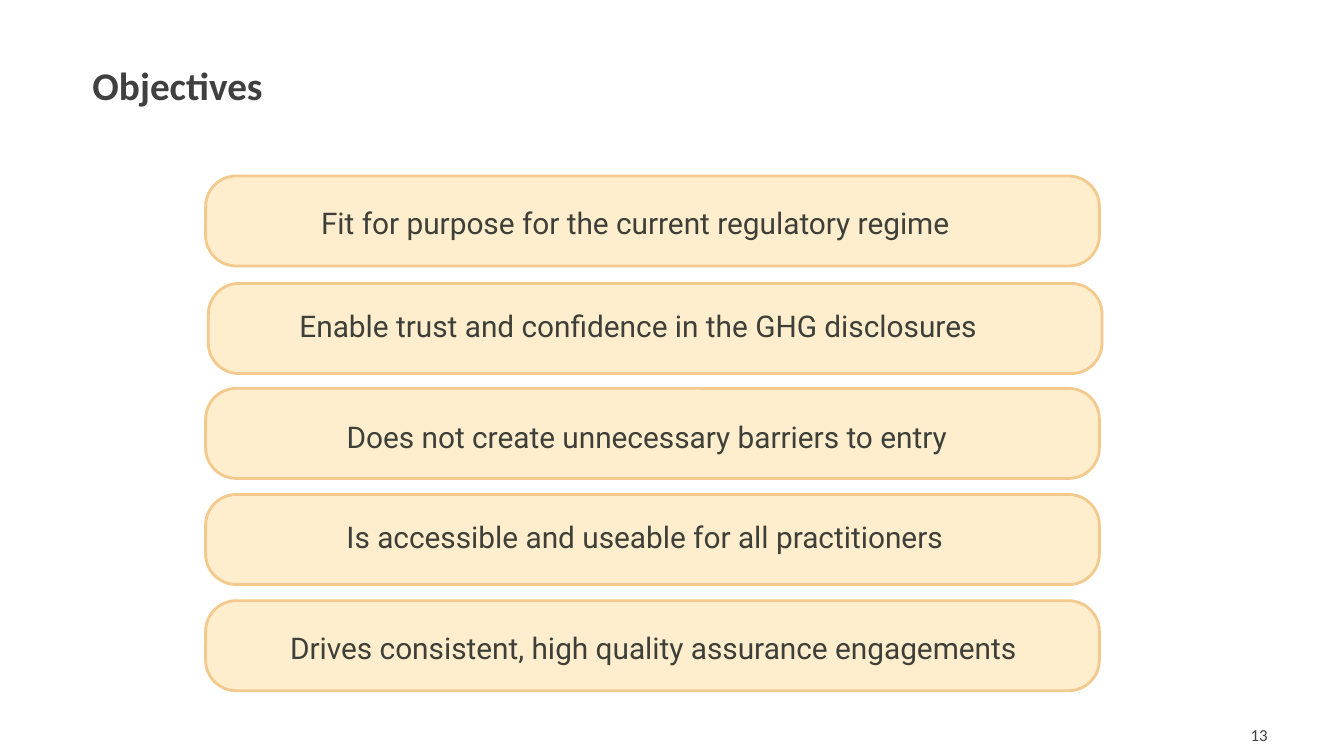
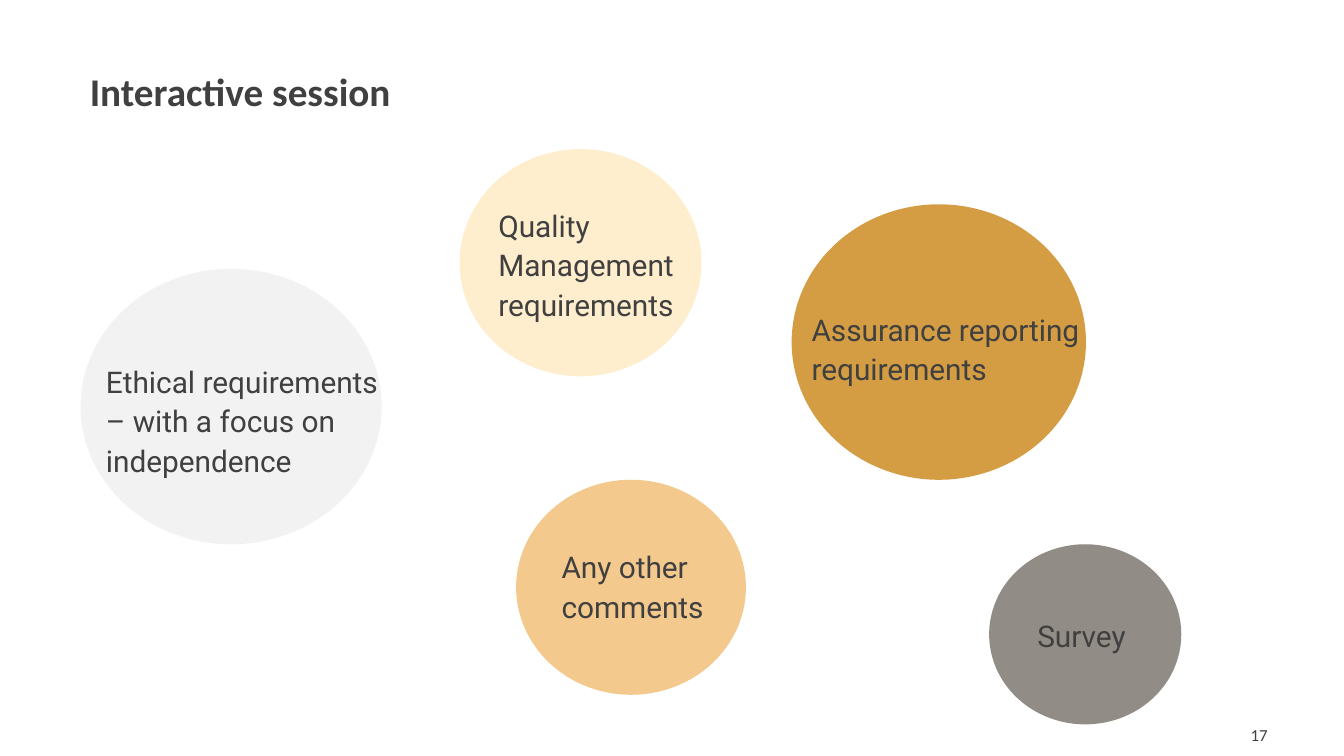
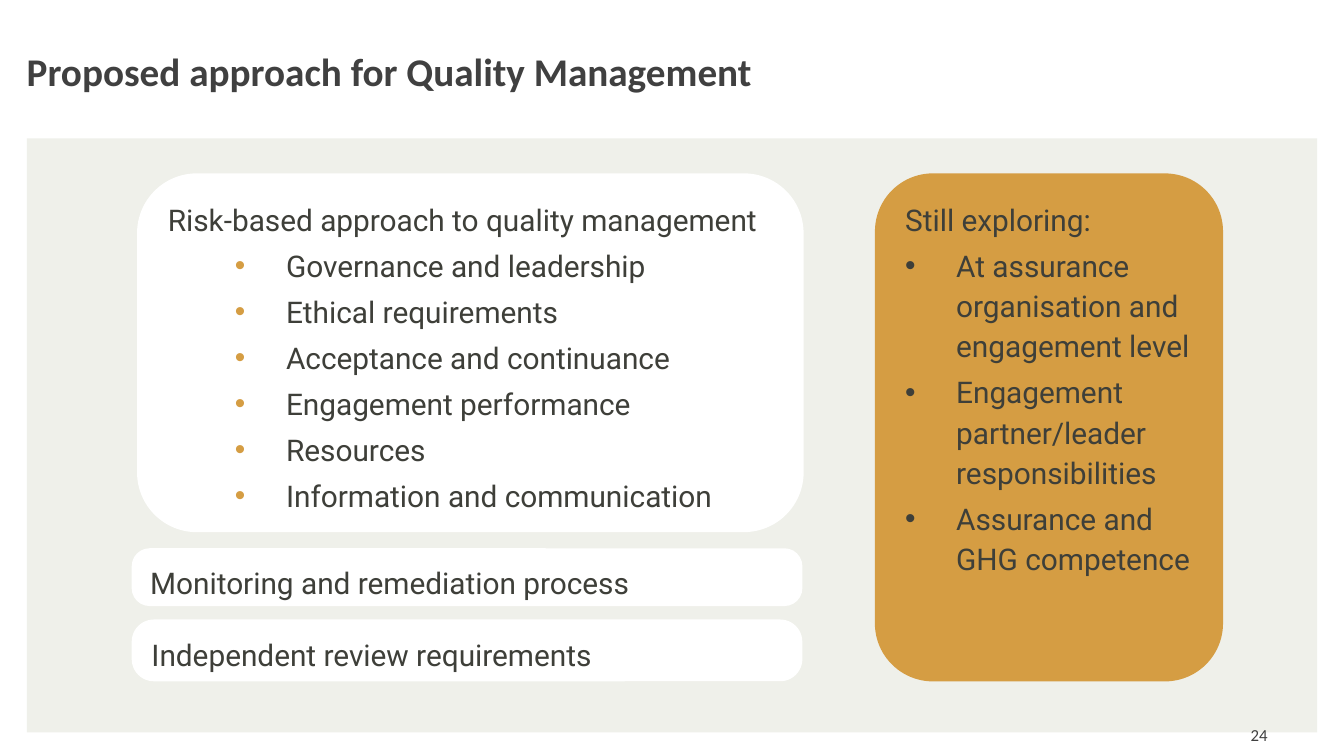
from dataclasses import dataclass

from lxml import etree
from pptx import Presentation
from pptx import util as u
from pptx.dml import color
from pptx.enum import shapes, text
from pptx.oxml import ns


@dataclass(frozen=True)
class Theme:
    heading_font: str = "Calibri"
    body_font: str = "Roboto"
    title_size: int = 21
    body_size: int = 16
    number_size: int = 9
    line_pitch: float = 21.6
    loose_spacing: float = 1.1
    space_after: int = 3
    charcoal: str = "404040"
    ink: str = "3E3F39"
    cream: str = "FFEECD"
    peach: str = "F3C98D"
    amber: str = "D59D43"
    stone: str = "918C85"
    mist: str = "F2F2F2"
    sage: str = "EFF0EA"
    white: str = "FFFFFF"


THEME = Theme()


@dataclass(frozen=True)
class Box:
    left: float
    top: float
    width: float
    height: float

    def lengths(self) -> tuple:
        return tuple(u.Inches(n) for n in (self.left, self.top, self.width, self.height))


@dataclass(frozen=True)
class Style:
    font: str = THEME.body_font
    size: int = THEME.body_size
    color: str = THEME.ink
    bold: bool = False
    spacing: float | u.Length | None = u.Pt(THEME.line_pitch)
    align: text.PP_ALIGN = text.PP_ALIGN.LEFT


TITLE = Style(THEME.heading_font, THEME.title_size, THEME.charcoal, True, None)
NUMBER = Style(THEME.heading_font, THEME.number_size, THEME.charcoal,
               spacing=None, align=text.PP_ALIGN.RIGHT)
BODY = Style()
BUBBLE_TEXT = Style(color=THEME.charcoal, spacing=THEME.loose_spacing)


@dataclass(frozen=True)
class Bullet:
    indent: float
    level: int = 0
    color: str | None = None


@dataclass(frozen=True)
class Label:
    wording: str
    box: Box


@dataclass(frozen=True)
class Objective:
    bar_left: float
    bar_top: float
    label: Label


@dataclass(frozen=True)
class Bubble:
    circle: Box
    fill: str
    label: Label


@dataclass(frozen=True)
class Card:
    box: Box
    fill: str
    heading: str
    items: tuple[str, ...] = ()
    bullet: Bullet | None = None
    rounding: float | None = None


HANGING = 0.38
ROUNDED = shapes.MSO_SHAPE.ROUNDED_RECTANGLE
CIRCLE = shapes.MSO_SHAPE.FLOWCHART_CONNECTOR

OBJECTIVES = (
    Objective(1.53, 1.31, Label("Fit for purpose for the current regulatory regime",
                                Box(2.29, 1.44, 5.29, 0.46))),
    Objective(1.55, 2.11, Label("Enable trust and confidence in the GHG disclosures",
                                Box(2.13, 2.21, 5.48, 0.46))),
    Objective(1.53, 2.89, Label("Does not create unnecessary barriers to entry",
                                Box(2.48, 3.03, 4.92, 0.46))),
    Objective(1.53, 3.68, Label("Is accessible and useable for all practitioners",
                                Box(2.48, 3.78, 4.87, 0.46))),
    Objective(1.53, 4.47, Label("Drives consistent, high quality assurance engagements",
                                Box(2.06, 4.6, 6.09, 0.41))),
)

BUBBLES = (
    Bubble(Box(0.6, 2, 2.24, 2.05), THEME.mist,
           Label("Ethical requirements – with a focus on independence",
                 Box(0.69, 2.63, 2.26, 1.11))),
    Bubble(Box(3.42, 1.11, 1.8, 1.69), THEME.cream,
           Label("Quality Management requirements", Box(3.61, 1.47, 1.67, 0.79))),
    Bubble(Box(5.89, 1.52, 2.19, 2.05), THEME.amber,
           Label("Assurance reporting requirements", Box(5.94, 2.24, 2.3, 0.72))),
    Bubble(Box(3.84, 3.57, 1.71, 1.6), THEME.peach,
           Label("Any other comments", Box(4.08, 4.01, 1.43, 0.72))),
    Bubble(Box(7.36, 4.05, 1.43, 1.34), THEME.stone,
           Label("Survey", Box(7.62, 4.52, 1.17, 0.43))),
)

CARDS = (
    Card(Box(1.02, 1.29, 4.96, 2.67), THEME.white,
         "Risk-based approach to quality management",
         ("Governance and leadership", "Ethical requirements",
          "Acceptance and continuance", "Engagement performance",
          "Resources", "Information and communication"),
         Bullet(0.88, 1, THEME.amber)),
    Card(Box(6.51, 1.29, 2.59, 3.78), THEME.amber, "Still exploring:",
         ("At assurance organisation and engagement level",
          "Engagement partner/leader responsibilities",
          "Assurance and GHG competence"),
         Bullet(HANGING)),
    Card(Box(0.98, 4.61, 4.99, 0.46), THEME.white,
         "Independent review requirements", rounding=0.36),
    Card(Box(0.98, 4.08, 4.99, 0.43), THEME.white,
         "Monitoring and remediation process", rounding=0.31),
)


def rgb(value: str) -> color.RGBColor:
    return color.RGBColor.from_string(value)


def add_bullet(paragraph, bullet: Bullet) -> None:
    paragraph.level = bullet.level
    properties = paragraph._p.get_or_add_pPr()
    properties.set("marL", str(u.Inches(bullet.indent)))
    properties.set("indent", str(-u.Inches(HANGING)))
    if bullet.color:
        bullet_color = etree.SubElement(properties, ns.qn("a:buClr"))
        etree.SubElement(bullet_color, ns.qn("a:srgbClr"), val=bullet.color)
    etree.SubElement(properties, ns.qn("a:buFont"), typeface="Arial")
    etree.SubElement(properties, ns.qn("a:buChar"), char="•")


def write(paragraph, wording: str, style: Style, bullet: Bullet | None = None) -> None:
    paragraph.text = wording
    if bullet:
        add_bullet(paragraph, bullet)
    paragraph.alignment = style.align
    paragraph.space_after = u.Pt(THEME.space_after)
    if style.spacing is not None:
        paragraph.line_spacing = style.spacing
    font = paragraph.font
    font.name, font.size, font.bold = style.font, u.Pt(style.size), style.bold
    font.color.rgb = rgb(style.color)


def add_label(slide, label: Label, style: Style,
              anchor: text.MSO_ANCHOR = text.MSO_ANCHOR.TOP) -> None:
    frame = slide.shapes.add_textbox(*label.box.lengths()).text_frame
    frame.word_wrap = True
    frame.vertical_anchor = anchor
    write(frame.paragraphs[0], label.wording, style)


def add_panel(slide, kind: shapes.MSO_SHAPE, box: Box, fill: str,
              outline: str | None = None, rounding: float | None = None):
    shape = slide.shapes.add_shape(kind, *box.lengths())
    shape.shadow.inherit = False
    shape.fill.solid()
    shape.fill.fore_color.rgb = rgb(fill)
    if outline:
        shape.line.color.rgb = rgb(outline)
        shape.line.width = u.Pt(1.5)
    else:
        shape.line.fill.background()
    if rounding is not None:
        shape.adjustments[0] = rounding
    return shape


def add_card(slide, card: Card) -> None:
    frame = add_panel(slide, ROUNDED, card.box, card.fill, rounding=card.rounding).text_frame
    frame.word_wrap = True
    frame.vertical_anchor = text.MSO_ANCHOR.TOP
    write(frame.paragraphs[0], card.heading, BODY)
    for item in card.items:
        write(frame.add_paragraph(), item, BODY, card.bullet)


def add_slide(presentation, title: Label, number: int, background: Box | None = None):
    slide = presentation.slides.add_slide(presentation.slide_layouts[6])
    if background:
        add_panel(slide, shapes.MSO_SHAPE.RECTANGLE, background, THEME.sage)
    add_label(slide, Label(str(number), Box(7.28, 5.32, 2.25, 0.3)), NUMBER,
              text.MSO_ANCHOR.MIDDLE)
    add_label(slide, title, TITLE)
    return slide


def build_objectives(presentation) -> None:
    slide = add_slide(presentation, Label("Objectives", Box(0.59, 0.41, 4.64, 0.53)), 13)
    for objective in OBJECTIVES:
        bar = Box(objective.bar_left, objective.bar_top, 6.65, 0.67)
        add_panel(slide, ROUNDED, bar, THEME.cream, THEME.peach, 0.34)
        add_label(slide, objective.label, BODY)


def build_session(presentation) -> None:
    slide = add_slide(presentation, Label("Interactive session", Box(0.57, 0.45, 4.64, 0.53)), 17)
    for bubble in BUBBLES:
        add_panel(slide, CIRCLE, bubble.circle, bubble.fill)
        add_label(slide, bubble.label, BUBBLE_TEXT)


def build_approach(presentation) -> None:
    title = Label("Proposed approach for Quality Management", Box(0.1, 0.3, 5.62, 0.53))
    slide = add_slide(presentation, title, 24, Box(0.2, 1.03, 9.6, 4.42))
    for card in CARDS:
        add_card(slide, card)


def main() -> None:
    presentation = Presentation()
    presentation.slide_width = u.Inches(10)
    presentation.slide_height = u.Inches(10 * 9 / 16)
    build_objectives(presentation)
    build_session(presentation)
    build_approach(presentation)
    presentation.save("out.pptx")


if __name__ == "__main__":
    main()
